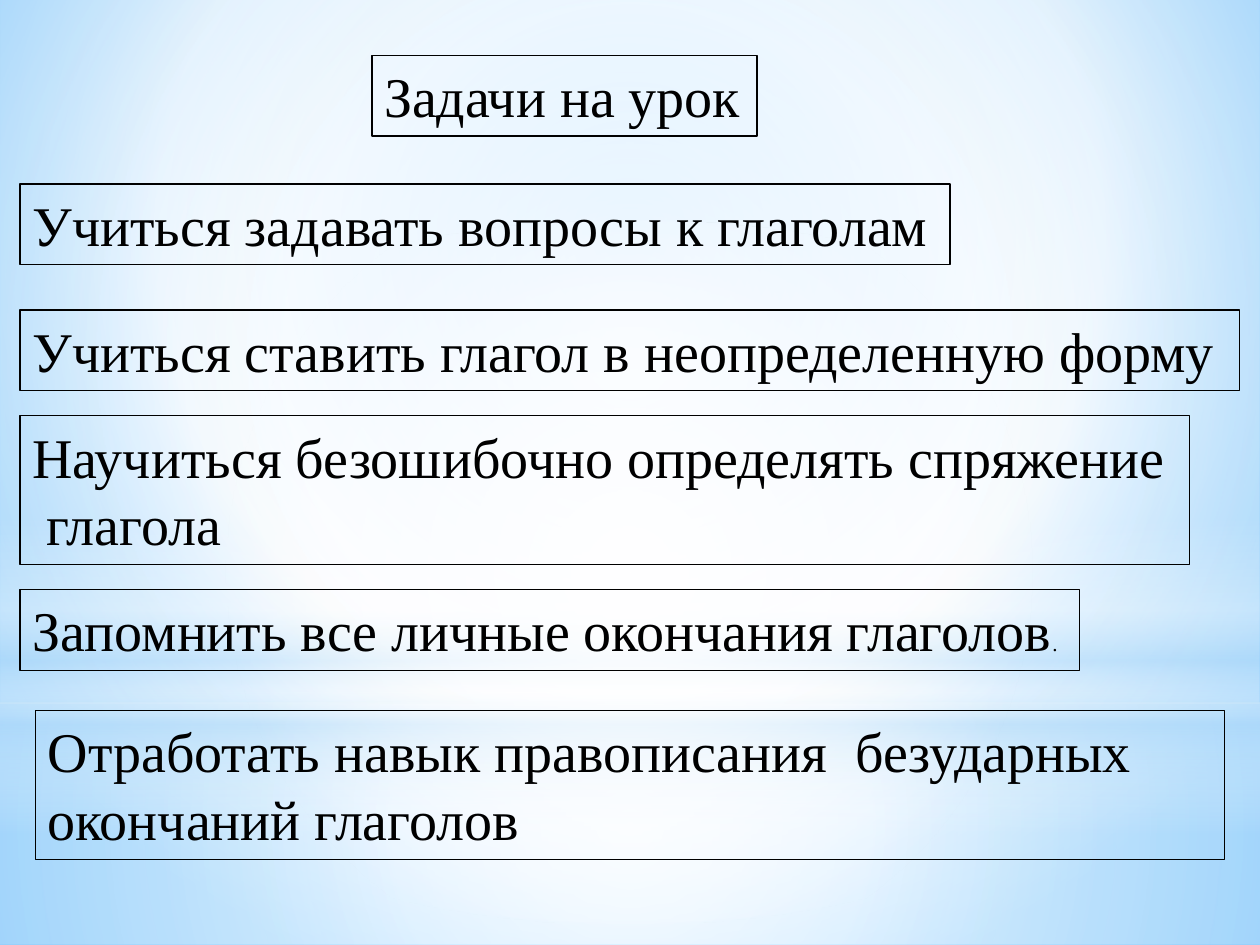
from lxml.etree import SubElement
from pptx import Presentation
from pptx.dml.color import RGBColor
from pptx.enum.shapes import MSO_SHAPE
from pptx.enum.text import MSO_AUTO_SIZE, PP_ALIGN
from pptx.oxml.ns import qn
from pptx.util import Inches, Pt


def color(hex_value):
    return RGBColor.from_string(hex_value)


class LessonSlide:
    font = "Times New Roman"
    ink = "000000"
    size = 32

    def __init__(self, presentation):
        self.slide = presentation.slides.add_slide(presentation.slide_layouts[6])

    def gradient(self, fill, owner, stops, center=None):
        fill.gradient()
        gradient = owner.find(".//" + qn("a:gradFill"))
        for child in list(gradient):
            gradient.remove(child)
        stop_list = SubElement(gradient, qn("a:gsLst"))
        for position, hex_value, opacity in stops:
            stop = SubElement(stop_list, qn("a:gs"), pos=str(position * 1000))
            tone = SubElement(stop, qn("a:srgbClr"), val=hex_value)
            if opacity < 100:
                SubElement(tone, qn("a:alpha"), val=str(opacity * 1000))
        if center:
            path = SubElement(gradient, qn("a:path"), path="circle")
            edges = {side: str(value * 1000) for side, value in zip("ltrb", center)}
            SubElement(path, qn("a:fillToRect"), **edges)
        else:
            SubElement(gradient, qn("a:lin"), ang="5400000", scaled="0")

    def background(self, stops, center):
        self.gradient(self.slide.background.fill, self.slide.element, stops, center)

    def glow(self, kind, top, height, stops, center=(50, 50, 50, 50)):
        glow = self.slide.shapes.add_shape(
            kind, Inches(0), Inches(top), Inches(10), Inches(height))
        glow.shadow.inherit = False
        glow.line.fill.background()
        self.gradient(glow.fill, glow.element.spPr, stops, center)

    def framed_text(self, left, top, width, height, paragraphs,
                    border=0.75, wrap=False, align=PP_ALIGN.LEFT):
        box = self.slide.shapes.add_textbox(
            Inches(left), Inches(top), Inches(width), Inches(height))
        box.line.color.rgb = color(self.ink)
        box.line.width = Pt(border)
        frame = box.text_frame
        frame.word_wrap = wrap
        frame.auto_size = MSO_AUTO_SIZE.SHAPE_TO_FIT_TEXT
        for index, runs in enumerate(paragraphs):
            paragraph = frame.add_paragraph() if index else frame.paragraphs[0]
            paragraph.alignment = align
            for text, size in runs:
                run = paragraph.add_run()
                run.text = text
                run.font.name = self.font
                run.font.size = Pt(size)
                run.font.color.rgb = color(self.ink)


def main():
    presentation = Presentation()
    presentation.slide_width = Inches(10)
    presentation.slide_height = Inches(7.5)
    lesson = LessonSlide(presentation)
    size = lesson.size
    white, sky = "FFFFFF", "B4DCFA"

    lesson.background(
        [(0, "9ED5FF", 100), (60, white, 100), (100, "5BB9FF", 100)], (20, 10, 20, 60))
    lesson.glow(MSO_SHAPE.RECTANGLE, 5.58, 1.92,
                [(0, white, 91), (37, white, 76), (100, sky, 79)])
    lesson.glow(MSO_SHAPE.RECTANGLE, 0, 5.58,
                [(0, white, 89), (48, white, 62), (100, sky, 79)])
    lesson.glow(MSO_SHAPE.RECTANGLE, 4.12, 2.5,
                [(0, white, 0), (29, white, 30), (45, sky, 40),
                 (55, white, 26), (65, sky, 60), (100, white, 0)], center=None)
    lesson.glow(MSO_SHAPE.OVAL, 1.75, 5.58, [(0, white, 100), (56, white, 0)])

    one_line, two_lines, margin = 0.64, 1.18, 0.16
    lesson.framed_text(2.95, 0.44, 3.06, one_line, [[("Задачи на урок", size)]], border=1)
    lesson.framed_text(margin, 1.46, 7.38, one_line,
                       [[("Учиться задавать вопросы к глаголам", size)]])
    lesson.framed_text(margin, 2.46, 9.68, one_line,
                       [[("Учиться ставить глагол в неопределенную форму", size)]])
    lesson.framed_text(margin, 3.3, 9.28, two_lines,
                       [[("Научиться безошибочно определять спряжение", size)],
                        [(" глагола", size)]])
    lesson.framed_text(margin, 4.68, 8.41, one_line,
                       [[("Запомнить все личные окончания глаголов", size), (".", 12)]],
                       align=PP_ALIGN.JUSTIFY)
    lesson.framed_text(0.28, 5.64, 9.44, two_lines,
                       [[("Отработать навык правописания  безударных окончаний глаголов", size)]],
                       wrap=True)
    presentation.save("out.pptx")


if __name__ == "__main__":
    main()
